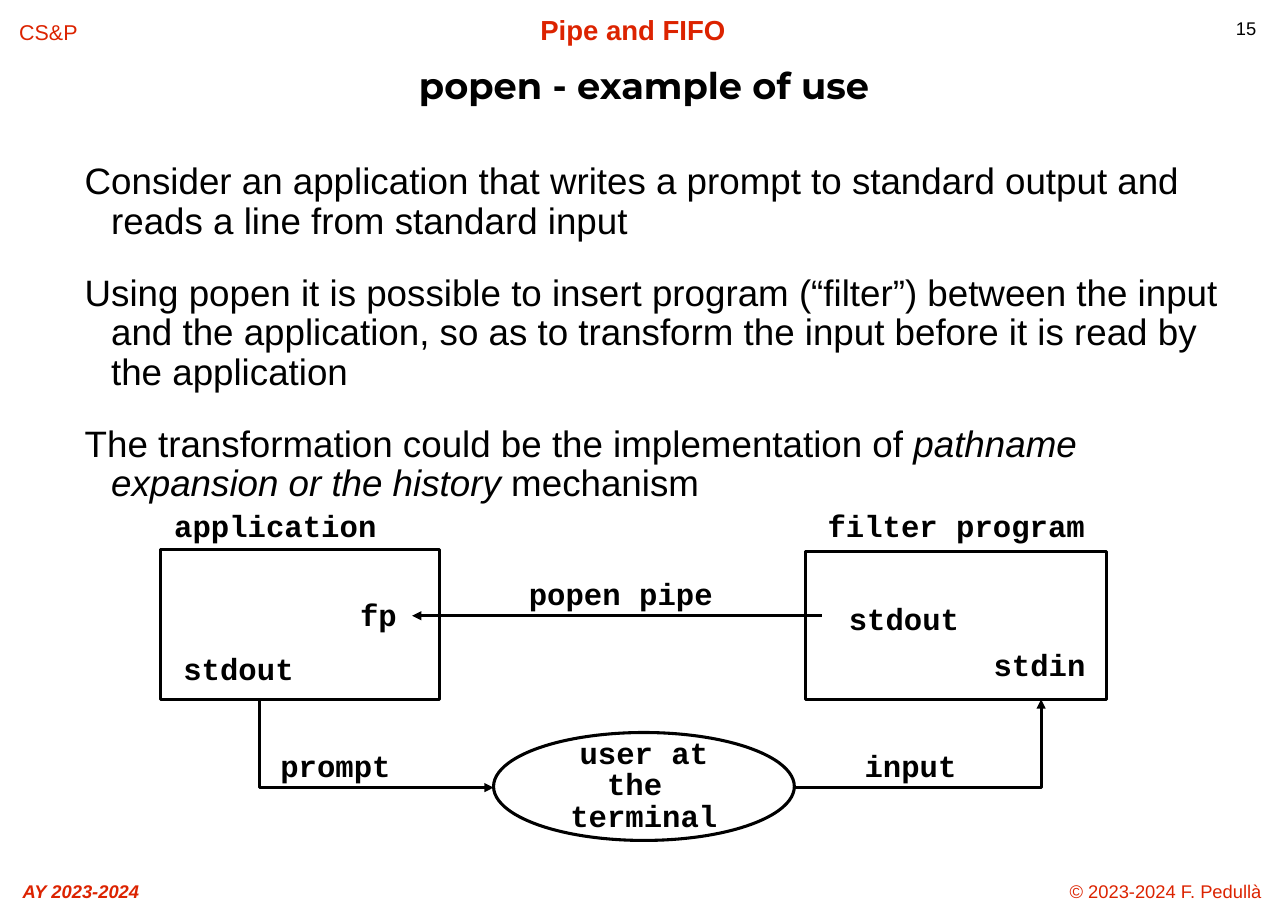
"""Build the slide on popen with its pipe diagram."""
from lxml import etree
from pptx import Presentation
from pptx.dml.color import RGBColor
from pptx.enum.shapes import MSO_CONNECTOR as Link, MSO_SHAPE as Form
from pptx.enum.text import MSO_ANCHOR as Anchor, MSO_AUTO_SIZE as AutoSize, PP_ALIGN as Align
from pptx.oxml.ns import qn
from pptx.util import Inches, Pt

BLACK, RED = "000000", "DC2300"
TITLE = "popen - example of use"
MARGINS = [
    ("15", (11.12, 0.1, 0.5, 0.35), 12, BLACK, Align.LEFT, False, False),
    ("© 2023-2024 F. Pedullà", (9.47, 7.94, 2.22, 0.33), 12, RED, Align.CENTER, False, False),
    ("AY 2023-2024", (0.03, 7.94, 1.41, 0.33), 12, RED, Align.CENTER, True, True),
    ("Pipe and FIFO", (4.15, 0.07, 3.19, 0.33), 18, RED, Align.CENTER, True, False),
    ("CS&P", (0.06, 0.12, 0.76, 0.33), 14, RED, Align.CENTER, False, False),
]
BODY = [
    [("Consider an application that writes a prompt to standard output and "
      "reads a line from standard input", False)],
    [("Using popen it is possible to insert program (“filter”) between the input and the "
      "application, so as to transform the input before it is read by the application", False)],
    [("The transformation could be the implementation of ", False),
     ("pathname expansion or the history ", True), ("mechanism", False)],
]
NODES = [
    (Form.RECTANGLE, (1.46, 4.99, 2.53, 1.36), ""),
    (Form.RECTANGLE, (7.31, 5.01, 2.73, 1.34), ""),
    (Form.OVAL, (4.48, 6.65, 2.73, 0.98), "user at the \vterminal"),
]
LABELS = [
    ("application", (1.4, 4.51, 2.2, 0.55)),
    ("filter program", (7.25, 4.51, 2.86, 0.55)),
    ("fp", (3.12, 5.32, 0.63, 0.55)),
    ("stdout", (7.46, 5.36, 1.49, 0.45)),
    ("stdout", (1.42, 5.81, 1.49, 0.45)),
    ("stdin", (8.8, 5.77, 1.27, 0.45)),
    ("popen pipe", (4.46, 5.13, 2.35, 0.55)),
    ("prompt", (2.3, 6.69, 1.49, 0.55)),
    ("input", (7.63, 6.69, 1.27, 0.55)),
]
ARROWS = [
    ((7.46, 5.59), (3.74, 5.59), None),
    ((2.17, 6.35), (4.48, 7.15), 0.08),
    ((7.21, 7.15), (9.45, 6.35), 1),
]


def color(value):
    return RGBColor.from_string(value)


def style(font, size, name="Arial", fill=BLACK, bold=False, italic=False):
    font.size, font.name, font.bold, font.italic = Pt(size), name, bold, italic
    font.color.rgb = color(fill)


def prepare(frame, anchor=Anchor.TOP):
    frame.word_wrap, frame.auto_size = True, AutoSize.NONE
    frame.vertical_anchor = anchor


def write(frame, text, spacing, align=Align.CENTER, anchor=Anchor.TOP, **look):
    prepare(frame, anchor)
    para = frame.paragraphs[0]
    para.text, para.alignment, para.line_spacing = text, align, spacing
    for span in para.runs:
        style(span.font, **look)


def add_box(page, area):
    return page.shapes.add_textbox(*map(Inches, area)).text_frame


def add_body(page):
    frame = add_box(page, (0.44, 1.43, 10.91, 3.06))
    prepare(frame)
    for index, pieces in enumerate(BODY):
        para = frame.add_paragraph() if index else frame.paragraphs[0]
        para.line_spacing = 0.9
        para.space_before = Pt(21 if index else 0)
        properties = para._p.get_or_add_pPr()
        properties.set("marL", str(Inches(0.47)))
        properties.set("indent", str(Inches(-0.24)))
        for text, italic in pieces:
            span = para.add_run()
            span.text = text
            style(span.font, 24, italic=italic)


def add_node(page, form, area, text):
    node = page.shapes.add_shape(form, *map(Inches, area))
    node.shadow.inherit = False
    node.fill.background()
    node.line.color.rgb, node.line.width = color(BLACK), Pt(2)
    if text:
        write(node.text_frame, text, 0.86, anchor=Anchor.MIDDLE,
              size=20, name="Courier New", bold=True)


def add_arrow(page, start, end, bend):
    kind = Link.STRAIGHT if bend is None else Link.ELBOW
    arrow = page.shapes.add_connector(kind, *map(Inches, start + end))
    arrow.line.color.rgb, arrow.line.width = color(BLACK), Pt(2)
    properties = arrow._element.spPr
    if bend is not None:
        geometry = properties.find(qn("a:prstGeom"))
        guides = geometry.find(qn("a:avLst"))
        if guides is None:
            guides = etree.SubElement(geometry, qn("a:avLst"))
        etree.SubElement(guides, qn("a:gd"), name="adj1", fmla=f"val {round(bend * 100000)}")
    etree.SubElement(properties.find(qn("a:ln")), qn("a:tailEnd"), type="triangle")
    etree.SubElement(properties, qn("a:effectLst"))


def main():
    deck = Presentation()
    deck.slide_width, deck.slide_height = Inches(11.69), Inches(8.27)
    page = deck.slides.add_slide(deck.slide_layouts[5])
    title = page.shapes.title
    title.left, title.top, title.width, title.height = map(Inches, (0.27, 0.49, 11.15, 0.63))
    write(title.text_frame, TITLE, 0.85, anchor=Anchor.MIDDLE,
          size=24, name="Montserrat", bold=True)
    for text, area, size, fill, align, bold, italic in MARGINS:
        write(add_box(page, area), text, 1.01, align,
              size=size, fill=fill, bold=bold, italic=italic)
    add_body(page)
    for node in NODES:
        add_node(page, *node)
    for arrow in ARROWS:
        add_arrow(page, *arrow)
    for text, area in LABELS:
        write(add_box(page, area), text, 1.12, size=20, name="Courier New", bold=True)
    deck.save("out.pptx")


if __name__ == "__main__":
    main()
